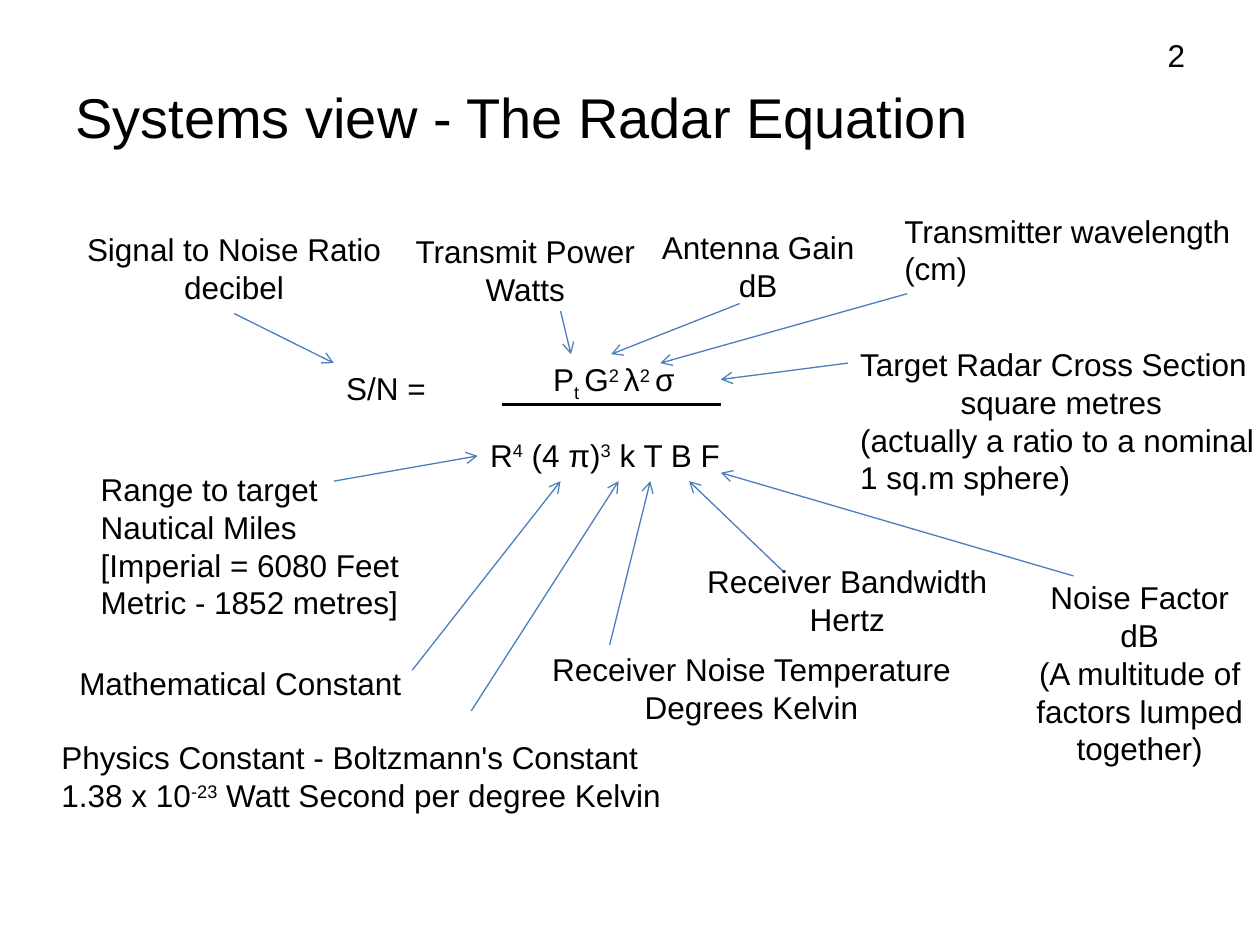
from dataclasses import dataclass
from typing import Optional

from lxml.etree import SubElement
from pptx import Presentation
from pptx.dml.color import RGBColor
from pptx.enum.shapes import MSO_CONNECTOR as Connector
from pptx.enum.text import MSO_ANCHOR as Anchor, MSO_AUTO_SIZE as AutoSize, PP_ALIGN as Align
from pptx.oxml.ns import qn
from pptx.util import Cm, Pt

BLACK = RGBColor(0x00, 0x00, 0x00)
ARROW_BLUE = RGBColor(0x4B, 0x7E, 0xBC)
FONT = "Arial"
ROW_HEIGHT, BOX_PADDING = 0.77, 0.25  # centimetres


@dataclass(frozen=True)
class Span:
    text: str
    baseline: int = 0  # percent above the line


@dataclass(frozen=True)
class Line:
    spans: tuple[Span, ...]
    align: Align = Align.LEFT


@dataclass(frozen=True)
class Stroke:
    """A straight line, in centimetres."""
    x1: float
    y1: float
    x2: float
    y2: float


@dataclass(frozen=True)
class Label:
    """A text, in centimetres, with the arrow that leads from it."""
    left: float
    top: float
    width: float
    lines: tuple[Line, ...]
    arrow: Optional[Stroke] = None
    wrapped_rows: int = 0

    @property
    def height(self) -> float:
        return BOX_PADDING + ROW_HEIGHT * (len(self.lines) + self.wrapped_rows)


def sup(text: str) -> Span:
    return Span(text, 30)


def sub(text: str) -> Span:
    return Span(text, -25)


def line(*parts: str | Span, align: Align = Align.LEFT) -> Line:
    return Line(tuple(Span(p) if isinstance(p, str) else p for p in parts), align)


def left(*texts: str) -> tuple[Line, ...]:
    return tuple(line(text) for text in texts)


def centred(*texts: str) -> tuple[Line, ...]:
    return tuple(line(text, align=Align.CENTER) for text in texts)


def add_text(page, x: float, y: float, width: float, height: float,
             lines: tuple[Line, ...], size: int = 18):
    box = page.shapes.add_textbox(Cm(x), Cm(y), Cm(width), Cm(height))
    frame = box.text_frame
    frame.word_wrap = True
    for index, text_line in enumerate(lines):
        para = frame.paragraphs[0] if index == 0 else frame.add_paragraph()
        para.alignment = text_line.align
        for part in text_line.spans:
            span = para.add_run()
            span.text = part.text
            span.font.name = FONT
            span.font.size = Pt(size)
            span.font.color.rgb = BLACK
            if part.baseline:
                span.font._element.set("baseline", str(part.baseline * 1000))
    return frame


def add_stroke(page, stroke: Stroke, color: RGBColor, width: float, arrow: bool) -> None:
    connector = page.shapes.add_connector(
        Connector.STRAIGHT, Cm(stroke.x1), Cm(stroke.y1), Cm(stroke.x2), Cm(stroke.y2))
    connector.line.color.rgb = color
    connector.line.width = Pt(width)
    if arrow:
        SubElement(connector.line._get_or_add_ln(), qn("a:tailEnd"), type="arrow")
    SubElement(connector._element.spPr, qn("a:effectLst"))


def add_label(page, label: Label) -> None:
    if label.arrow:
        add_stroke(page, label.arrow, ARROW_BLUE, 0.75, arrow=True)
    frame = add_text(page, label.left, label.top, label.width, label.height, label.lines)
    frame.auto_size = AutoSize.SHAPE_TO_FIT_TEXT


EQUATION = (
    Label(6.73, 7.32, 2.21, left("S/N =")),
    Label(10.9, 7.14, 3.81, (
        line("P", sub("t "), "G", sup("2 "), "λ", sup("2 "), "σ"),)),
    Label(9.63, 8.66, 5.66, (
        line("R", sup("4"), " (4 π)", sup("3"), " k T B F"),)),
)
FRACTION_BAR = Stroke(10.11, 8.15, 14.53, 8.15)

CALLOUTS = (
    Label(1.42, 4.52, 6.6, centred("Signal to Noise Ratio", "decibel"),
          Stroke(4.72, 6.32, 6.73, 7.32)),
    Label(7.29, 4.55, 6.6, centred("Transmit Power", "Watts"),
          Stroke(11.3, 6.27, 11.51, 7.14)),
    Label(12.29, 4.47, 5.99, centred("Antenna Gain", "dB"),
          Stroke(14.91, 6.12, 12.32, 7.14)),
    Label(17.98, 4.14, 7.42, left("Transmitter wavelength", "(cm)"),
          Stroke(18.29, 5.92, 13.31, 7.32)),
    Label(17.09, 6.83, 8.79,
          left("Target Radar Cross Section") + centred("square metres ")
          + left("(actually a ratio to a nominal 1 sq.m sphere)"),
          Stroke(17.09, 7.32, 14.53, 7.65), wrapped_rows=1),
    Label(1.35, 13.26, 8.64, left("Mathematical Constant"),
          Stroke(8.31, 13.51, 11.3, 9.7)),
    Label(0.99, 14.76, 13.61,
          left("Physics Constant - Boltzmann's Constant")
          + (line("1.38 x 10", sup("-23"), " Watt Second per degree Kelvin"),),
          Stroke(9.5, 14.33, 12.47, 9.7)),
    Label(10.59, 12.98, 9.12, centred("Receiver Noise Temperature", "Degrees Kelvin"),
          Stroke(12.29, 13, 13.11, 9.7)),
    Label(12.52, 11.2, 9.12, centred("Receiver Bandwidth", "Hertz"),
          Stroke(15.8, 11.53, 13.89, 9.7)),
    Label(20.04, 11.53, 5.87,
          centred("Noise Factor", "dB", "(A multitude of factors lumped together)"),
          Stroke(21.64, 11.61, 14.53, 9.53), wrapped_rows=2),
    Label(1.78, 9.35, 7.16,
          left("Range to target", "Nautical Miles",
               "[Imperial = 6080 Feet", "Metric - 1852 metres]"),
          Stroke(6.73, 9.7, 9.63, 9.19)),
)
PAGE_NUMBER = Label(23.29, 0.61, 1.12, left("2"))


def main() -> None:
    deck = Presentation()
    deck.slide_width, deck.slide_height = Cm(25.4), Cm(19.05)
    page = deck.slides.add_slide(deck.slide_layouts[6])

    # Title
    title = add_text(page, 1.27, 0.76, 22.86, 3.18,
                     left("Systems view - The Radar Equation"), size=32)
    title.vertical_anchor = Anchor.MIDDLE

    # Equation, its explained terms and the page number
    add_stroke(page, FRACTION_BAR, BLACK, 1.5, arrow=False)
    for label in (*EQUATION, *CALLOUTS, PAGE_NUMBER):
        add_label(page, label)

    deck.save("out.pptx")


if __name__ == "__main__":
    main()
